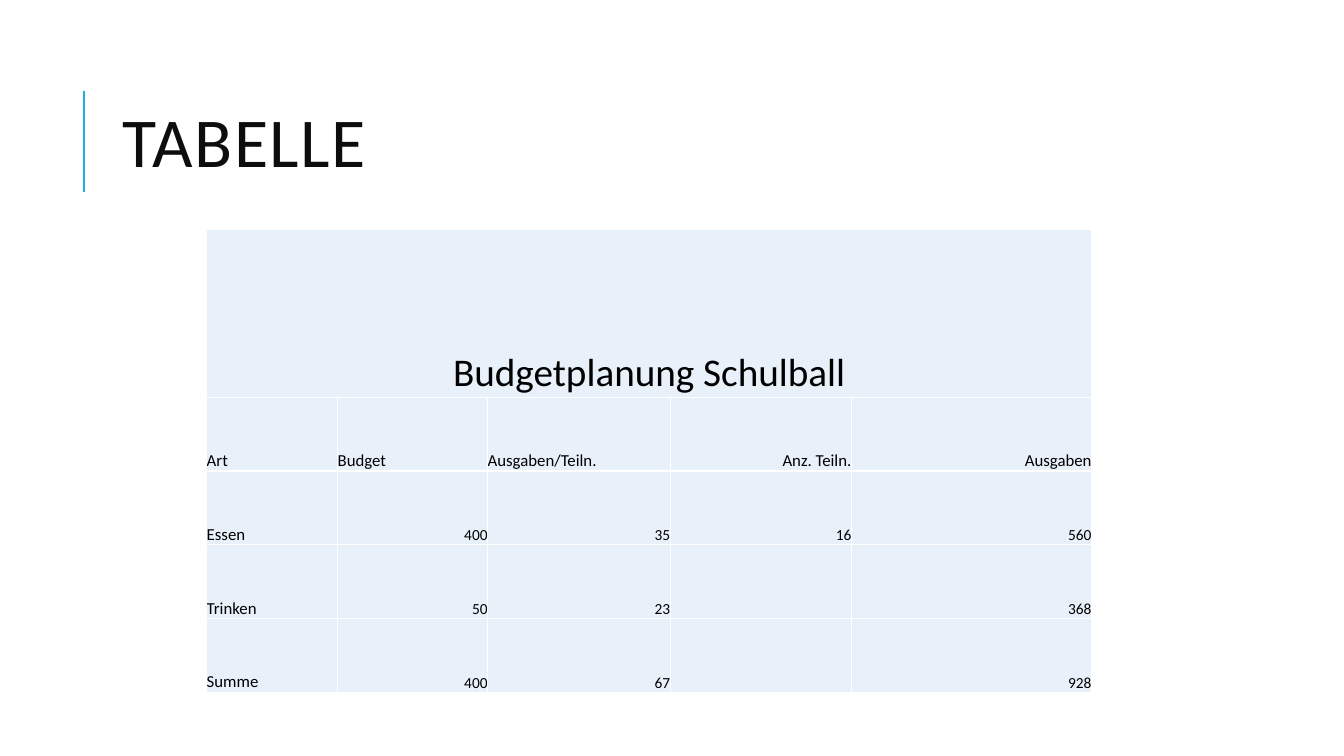
from lxml import etree
from pptx import Presentation
from pptx.dml.color import RGBColor
from pptx.enum.shapes import MSO_CONNECTOR
from pptx.enum.text import MSO_ANCHOR, MSO_AUTO_SIZE, PP_ALIGN
from pptx.oxml.ns import qn
from pptx.util import Cm, Pt

LEFT, MID, RIGHT = PP_ALIGN.LEFT, PP_ALIGN.CENTER, PP_ALIGN.RIGHT
CENTER, BOTTOM = MSO_ANCHOR.MIDDLE, MSO_ANCHOR.BOTTOM
NO_FIT = MSO_AUTO_SIZE.NONE
STRAIGHT = MSO_CONNECTOR.STRAIGHT

FONT = "Calibri"
COLORS = {"accent": "1CADE4", "title": "0D0D0D", "text": "000000",
          "cell": "E8F1FA", "grid": "FFFFFF"}

COLS = [3.3, 3.78, 4.6, 4.57, 6.05]
ROWS = [4.22] + [1.86] * 4
HEAD = "Budgetplanung Schulball"
DATA = [
    ["Art", "Budget", "Ausgaben/Teiln.", "Anz. Teiln.", "Ausgaben"],
    ["Essen", "400", "35", "16", "560"],
    ["Trinken", "50", "23", "", "368"],
    ["Summe", "400", "67", "", "928"],
]


def color(name):
    return RGBColor.from_string(COLORS[name])


def add_run(para, text, size, name):
    run = para.add_run()
    run.text = text
    run.font.name = FONT
    run.font.size = Pt(size)
    run.font.color.rgb = color(name)
    return run


def add_title(slide, x, y, w, h):
    # Title text
    title = slide.shapes.title
    title.left, title.top, title.width, title.height = Cm(x), Cm(y), Cm(w), Cm(h)
    frame = title.text_frame
    frame.word_wrap = True
    frame.auto_size = NO_FIT
    frame.vertical_anchor = CENTER
    para = frame.paragraphs[0]
    para.alignment = LEFT
    para.line_spacing = 0.8
    run = add_run(para, "TABELLE", 50, "title")
    run.font._element.set("spc", "100")

    # Accent line beside the title
    bar = x - 0.73
    line = slide.shapes.add_connector(
        STRAIGHT, Cm(bar), Cm(y + 3.2), Cm(bar), Cm(y + 0.66))
    line.line.color.rgb = color("accent")
    line.line.width = Pt(1.5)
    etree.SubElement(line._element.spPr, qn("a:effectLst"))


def style_cell(cell):
    # Borders come before the fill in the cell properties
    props = cell._tc.get_or_add_tcPr()
    for side in ("lnL", "lnR", "lnT", "lnB"):
        edge = etree.SubElement(props, qn("a:" + side), w=str(Pt(1)))
        fill = etree.SubElement(edge, qn("a:solidFill"))
        etree.SubElement(fill, qn("a:srgbClr"), val=COLORS["grid"])
    cell.fill.solid()
    cell.fill.fore_color.rgb = color("cell")
    cell.margin_left = cell.margin_right = 0
    cell.margin_top = cell.margin_bottom = 0
    cell.vertical_anchor = BOTTOM


def fill_cell(cell, text, size, align):
    para = cell.text_frame.paragraphs[0]
    para.alignment = align
    if text:
        add_run(para, text, size, "text")


def add_budget(slide, x, y):
    # Table grid
    table = slide.shapes.add_table(
        len(ROWS), len(COLS), Cm(x), Cm(y), Cm(sum(COLS)), Cm(sum(ROWS))).table
    table.first_row = table.horz_banding = False
    for col, width in zip(table.columns, COLS):
        col.width = Cm(width)
    for row, height in zip(table.rows, ROWS):
        row.height = Cm(height)
    for cell in table.iter_cells():
        style_cell(cell)

    # Heading across all columns
    table.cell(0, 0).merge(table.cell(0, len(COLS) - 1))
    fill_cell(table.cell(0, 0), HEAD, 28, MID)

    # Labels and amounts
    for r, row in enumerate(DATA, 1):
        for c, text in enumerate(row):
            size = 11 if text.isdigit() else 12
            align = RIGHT if c > 2 or text.isdigit() else LEFT
            fill_cell(table.cell(r, c), text, size, align)


def main():
    deck = Presentation()
    deck.slide_width, deck.slide_height = Cm(33.87), Cm(19.05)
    slide = deck.slides.add_slide(deck.slide_layouts[5])
    add_title(slide, 2.84, 1.63, 27, 4.17)
    add_budget(slide, 5.21, 5.79)
    deck.save("out.pptx")


if __name__ == "__main__":
    main()
